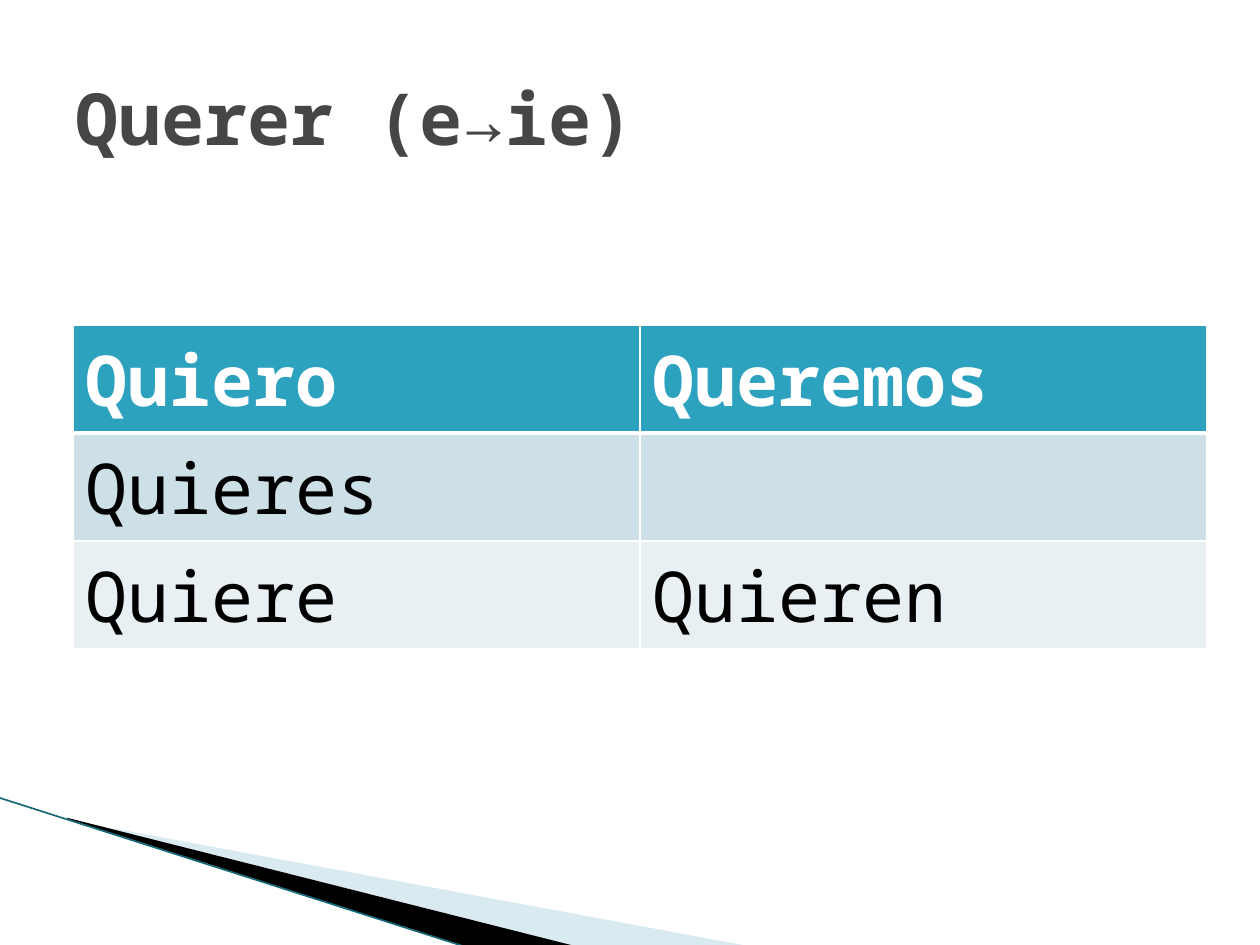
import dataclasses

import pptx
import pptx.dml.color
import pptx.enum.shapes
import pptx.enum.text
import pptx.oxml
import pptx.oxml.ns
import pptx.util
from pptx.util import Inches


@dataclasses.dataclass(frozen=True)
class Theme:
    font: str = "Noto Sans Mono"
    title_size: float = 41
    cell_size: float = 40
    title: str = "464646"
    header_text: str = "FFFFFF"
    body_text: str = "000000"
    row_fills: tuple = ("2DA2BF", "CDE0E8", "E8F0F4")
    border: str = "FFFFFF"
    pale_wedge: str = "A0CBDC"
    dark_wedge: str = "000000"
    edge: str = "16697A"


THEME = Theme()


def rgb(color):
    return pptx.dml.color.RGBColor.from_string(color)


def write_text(frame, text, size, color, bold=False):
    span = frame.paragraphs[0].add_run()
    span.text = text
    span.font.name = THEME.font
    span.font.size = pptx.util.Pt(size)
    span.font.bold = bold
    span.font.color.rgb = rgb(color)


def add_title(page, text):
    box = page.shapes.add_textbox(Inches(0.5), Inches(0.3), Inches(9), Inches(1.25))
    box.text_frame.word_wrap = True
    box.text_frame.vertical_anchor = pptx.enum.text.MSO_ANCHOR.MIDDLE
    write_text(box.text_frame, text, THEME.title_size, THEME.title, bold=True)


def add_wedge(page, points, color, opacity=100):
    start, *others = [(Inches(x), Inches(y)) for x, y in points]
    builder = page.shapes.build_freeform(*start)
    builder.add_line_segments(others, close=True)
    wedge = builder.convert_to_shape()
    wedge.shadow.inherit = False
    wedge.fill.solid()
    wedge.fill.fore_color.rgb = rgb(color)
    wedge.line.fill.background()
    if opacity < 100:
        color_element = wedge.fill._xPr.find(".//" + pptx.oxml.ns.qn("a:srgbClr"))
        alpha = color_element.makeelement(
            pptx.oxml.ns.qn("a:alpha"), {"val": str(opacity * 1000)}
        )
        color_element.append(alpha)


def add_edge(page, start, end):
    edge = page.shapes.add_connector(
        pptx.enum.shapes.MSO_CONNECTOR.STRAIGHT,
        *[Inches(value) for value in (*start, *end)],
    )
    edge.line.color.rgb = rgb(THEME.edge)
    edge.line.width = pptx.util.Pt(0.95)
    properties = edge._element.spPr
    properties.append(properties.makeelement(pptx.oxml.ns.qn("a:effectLst"), {}))


def set_borders(cell, widths):
    properties = cell._tc.get_or_add_tcPr()
    for index, (side, width) in enumerate(widths.items()):
        border = pptx.oxml.parse_xml(
            f'<a:ln{side} {pptx.oxml.ns.nsdecls("a")} w="{pptx.util.Pt(width)}">'
            f'<a:solidFill><a:srgbClr val="{THEME.border}"/></a:solidFill></a:ln{side}>'
        )
        properties.insert(index, border)


def add_verb_table(page, rows):
    table = page.shapes.add_table(
        len(rows), len(rows[0]), Inches(0.58), Inches(2.58), Inches(9), Inches(2.55)
    ).table
    for row_index, row in enumerate(rows):
        header = row_index == 0
        for column_index, text in enumerate(row):
            cell = table.cell(row_index, column_index)
            cell.fill.solid()
            cell.fill.fore_color.rgb = rgb(THEME.row_fills[row_index])
            set_borders(cell, {
                "L": 1, "R": 1,
                "T": 3 if row_index == 1 else 1,
                "B": 3 if header else 1,
            })
            if text:
                color = THEME.header_text if header else THEME.body_text
                write_text(cell.text_frame, text, THEME.cell_size, color, bold=header)


def main():
    deck = pptx.Presentation()
    deck.slide_width, deck.slide_height = Inches(10), Inches(7.5)
    page = deck.slides.add_slide(deck.slide_layouts[6])
    add_wedge(page, [(0.55, 6.51), (5.95, 7.51), (4.56, 7.51), (0.55, 6.5)],
              THEME.pale_wedge, opacity=40)
    add_wedge(page, [(0.53, 6.49), (4.57, 7.51), (3.72, 7.52), (0.54, 6.5)],
              THEME.dark_wedge)
    add_edge(page, (-0.01, 6.33), (3.71, 7.52))
    add_verb_table(page, [
        ("Quiero", "Queremos"),
        ("Quieres", ""),
        ("Quiere", "Quieren"),
    ])
    add_title(page, "Querer (e→ie)")
    deck.save("out.pptx")


if __name__ == "__main__":
    main()
